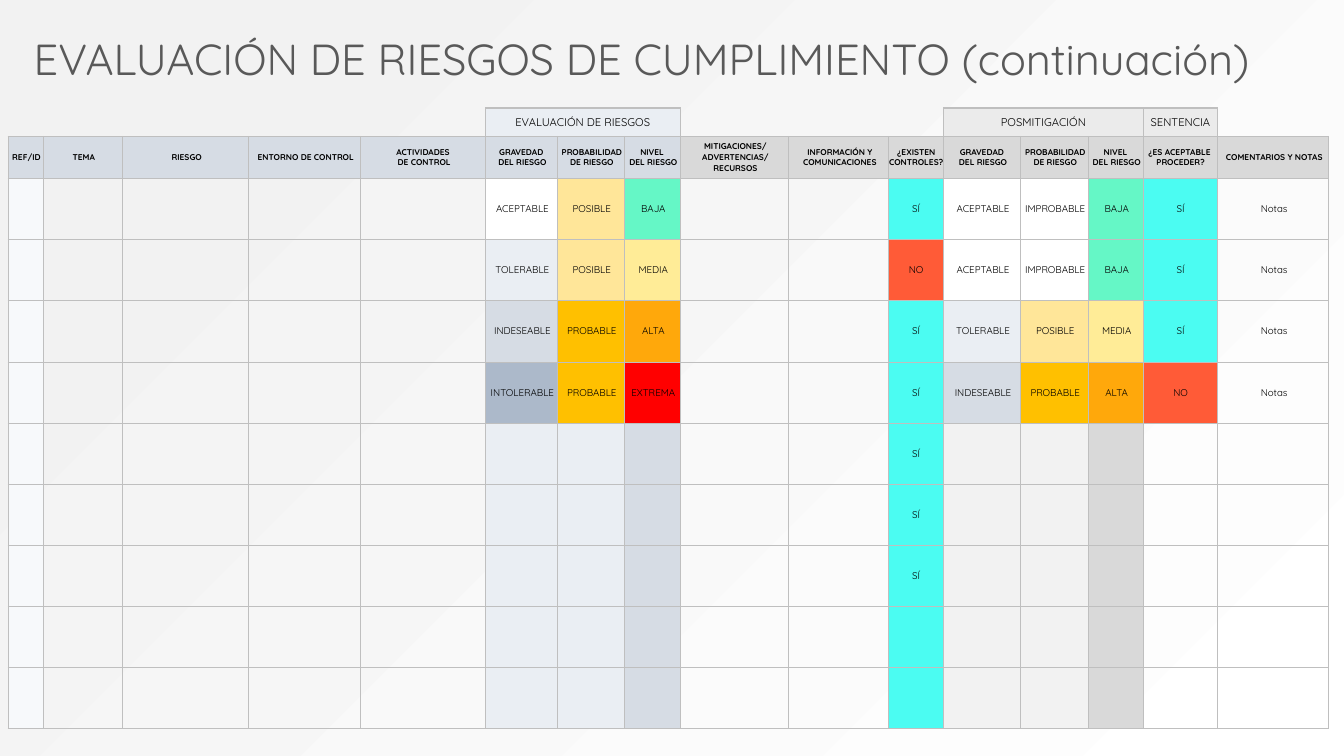
from dataclasses import dataclass

from lxml import etree
from pptx import Presentation
from pptx.dml.color import RGBColor
from pptx.enum.text import MSO_ANCHOR, MSO_AUTO_SIZE, PP_ALIGN
from pptx.oxml.ns import qn
from pptx.slide import Slide
from pptx.table import Table, _Cell
from pptx.util import Cm, Pt

MIDDLE = MSO_ANCHOR.MIDDLE
GROW = MSO_AUTO_SIZE.SHAPE_TO_FIT_TEXT
CENTER = PP_ALIGN.CENTER
PLAIN_TABLE_STYLE = "{2D5ABB26-0587-4C30-8999-92F81FD0307C}"
ALL_SIDES = "LRTB"


@dataclass(frozen=True)
class Theme:
    font: str = "Quicksand"
    title: str = "595959"
    ink: str = "000000"
    white: str = "FFFFFF"
    backdrop: str = "F2F2F2"
    border: str = "BFBFBF"
    blue_pale: str = "F7F9FB"
    blue_light: str = "EAEEF3"
    blue: str = "D6DCE4"
    blue_dark: str = "ACB9CA"
    grey_light: str = "EBEBEB"
    grey: str = "D9D9D9"
    possible: str = "FFE699"
    probable: str = "FFC000"
    low: str = "65F7C6"
    medium: str = "FFEC97"
    high: str = "FFA80B"
    extreme: str = "FF0000"
    yes: str = "4BFCF2"
    no: str = "FF5B37"
    title_size: float = 31
    group_size: float = 8
    header_size: float = 6
    body_size: float = 7


THEME = Theme()


@dataclass(frozen=True)
class Column:
    header: str
    width: float
    header_fill: str
    body_fill: str | None = None
    inset: float = 0.05


@dataclass(frozen=True)
class Group:
    label: str
    first: int
    last: int
    fill: str


COLUMNS = [
    Column("REF/ID", 0.88, THEME.blue, THEME.blue_pale),
    Column("TEMA", 2.01, THEME.blue),
    Column("RIESGO", 3.18, THEME.blue),
    Column("ENTORNO DE CONTROL", 2.82, THEME.blue),
    Column("ACTIVIDADES \nDE CONTROL", 3.15, THEME.blue),
    Column("GRAVEDAD \nDEL RIESGO", 1.8, THEME.blue, THEME.blue_light),
    Column("PROBABILIDAD DE RIESGO", 1.7, THEME.blue, THEME.blue_light),
    Column("NIVEL \nDEL RIESGO", 1.4, THEME.blue, THEME.blue),
    Column("MITIGACIONES/\nADVERTENCIAS/ RECURSOS", 2.74, THEME.grey),
    Column("INFORMACIÓN Y COMUNICACIONES", 2.52, THEME.grey),
    Column("¿EXISTEN CONTROLES?", 1.38, THEME.grey, THEME.yes, 0),
    Column("GRAVEDAD \nDEL RIESGO", 1.94, THEME.grey, THEME.backdrop),
    Column("PROBABILIDAD DE RIESGO", 1.7, THEME.grey, THEME.backdrop),
    Column("NIVEL \nDEL RIESGO", 1.4, THEME.grey, THEME.grey),
    Column("¿ES ACEPTABLE \nPROCEDER?", 1.87, THEME.grey, inset=0),
    Column("COMENTARIOS Y NOTAS", 2.8, THEME.grey),
]
GROUPS = [
    Group("EVALUACIÓN DE RIESGOS", 5, 7, THEME.blue_light),
    Group("POSMITIGACIÓN", 11, 13, THEME.grey_light),
    Group("SENTENCIA", 14, 14, THEME.grey_light),
]
RATING_FILLS = {
    "ACEPTABLE": THEME.white, "TOLERABLE": THEME.blue_light,
    "INDESEABLE": THEME.blue, "INTOLERABLE": THEME.blue_dark,
    "IMPROBABLE": THEME.white, "POSIBLE": THEME.possible, "PROBABLE": THEME.probable,
    "BAJA": THEME.low, "MEDIA": THEME.medium, "ALTA": THEME.high, "EXTREMA": THEME.extreme,
    "SÍ": THEME.yes, "NO": THEME.no,
}
# Columns 5-7 hold the first assessment, 10-15 the controls and the outcome
RATED_COLUMNS = [5, 6, 7, 10, 11, 12, 13, 14, 15]
ASSESSMENTS = [
    ("ACEPTABLE", "POSIBLE", "BAJA", "SÍ", "ACEPTABLE", "IMPROBABLE", "BAJA", "SÍ", "Notas"),
    ("TOLERABLE", "POSIBLE", "MEDIA", "NO", "ACEPTABLE", "IMPROBABLE", "BAJA", "SÍ", "Notas"),
    ("INDESEABLE", "PROBABLE", "ALTA", "SÍ", "TOLERABLE", "POSIBLE", "MEDIA", "SÍ", "Notas"),
    ("INTOLERABLE", "PROBABLE", "EXTREMA", "SÍ", "INDESEABLE", "PROBABLE", "ALTA", "NO", "Notas"),
    *[("", "", "", "SÍ")] * 3,
    *[()] * 2,
]
ROW_HEIGHTS = [0.71, 1.07] + [1.54] * len(ASSESSMENTS)


def style_runs(paragraph, size: float, color: str, bold: bool = False) -> None:
    for run in paragraph.runs:
        run.font.name = THEME.font
        run.font.size = Pt(size)
        run.font.bold = bold
        run.font.color.rgb = RGBColor.from_string(color)


def add_title(slide: Slide) -> None:
    frame = slide.shapes.add_textbox(Cm(0.6), Cm(0.69), Cm(32.69), Cm(1.57)).text_frame
    frame.word_wrap = False
    frame.auto_size = GROW
    frame.text = "EVALUACIÓN DE RIESGOS DE CUMPLIMIENTO (continuación)"
    style_runs(frame.paragraphs[0], THEME.title_size, THEME.title)


def set_borders(cell: _Cell, sides: str = ALL_SIDES, top_width: float = 0.5) -> None:
    properties = cell._tc.get_or_add_tcPr()
    for side in ALL_SIDES:
        width = top_width if side == "T" else 0.5
        line = etree.SubElement(properties, qn(f"a:ln{side}"), w=str(Pt(width)))
        if side in sides:
            fill = etree.SubElement(line, qn("a:solidFill"))
            etree.SubElement(fill, qn("a:srgbClr"), val=THEME.border)
        else:
            etree.SubElement(line, qn("a:noFill"))


def fill_cell(cell: _Cell, text: str, size: float, fill: str | None,
              inset: float = 0, bold: bool = False) -> None:
    cell.margin_left = Cm(inset)
    cell.margin_right = cell.margin_top = cell.margin_bottom = 0
    cell.vertical_anchor = MIDDLE
    paragraph = cell.text_frame.paragraphs[0]
    paragraph.alignment = CENTER
    if text:
        paragraph.text = text
        style_runs(paragraph, size, THEME.ink, bold)
    else:
        # Keeps an empty cell from stretching its row
        paragraph._p.get_or_add_endParaRPr().set("sz", str(int(size * 100)))
    if fill:
        cell.fill.solid()
        cell.fill.fore_color.rgb = RGBColor.from_string(fill)
    else:
        cell.fill.background()


def fill_group_row(table: Table) -> None:
    group_at = {i: group for group in GROUPS for i in range(group.first, group.last + 1)}
    for i in range(len(COLUMNS)):
        cell, group = table.cell(0, i), group_at.get(i)
        if group:
            set_borders(cell, top_width=1)
            fill_cell(cell, group.label if i == group.first else "", THEME.group_size, group.fill)
        else:
            sides = ("L" if i - 1 in group_at else "") + ("R" if i + 1 in group_at else "")
            set_borders(cell, sides + "B")
            fill_cell(cell, "", THEME.group_size, None)
    for group in GROUPS:
        if group.last > group.first:
            table.cell(0, group.first).merge(table.cell(0, group.last))


def add_risk_table(slide: Slide) -> None:
    frame = slide.shapes.add_table(
        len(ROW_HEIGHTS), len(COLUMNS), Cm(0.2), Cm(2.72),
        Cm(sum(column.width for column in COLUMNS)), Cm(sum(ROW_HEIGHTS)))
    table = frame.table
    table.first_row = table.horz_banding = False
    table._tbl.tblPr.find(qn("a:tableStyleId")).text = PLAIN_TABLE_STYLE
    for row, height in zip(table.rows, ROW_HEIGHTS):
        row.height = Cm(height)
    fill_group_row(table)
    for i, column in enumerate(COLUMNS):
        table.columns[i].width = Cm(column.width)
        header = table.cell(1, i)
        set_borders(header)
        fill_cell(header, column.header, THEME.header_size, column.header_fill, column.inset, True)
        for row, assessment in enumerate(ASSESSMENTS, start=2):
            value = dict(zip(RATED_COLUMNS, assessment)).get(i, "")
            cell = table.cell(row, i)
            set_borders(cell)
            fill_cell(cell, value, THEME.body_size,
                      RATING_FILLS.get(value, column.body_fill), column.inset)


def set_background(slide: Slide) -> None:
    fill = slide.background.fill
    fill.gradient()
    fill.gradient_angle = 135
    for stop, color, position in zip(fill.gradient_stops, (THEME.white, THEME.backdrop), (0, 0.87)):
        stop.color.rgb = RGBColor.from_string(color)
        stop.position = position


def main() -> None:
    presentation = Presentation()
    presentation.slide_width, presentation.slide_height = Cm(33.87), Cm(19.05)
    slide = presentation.slides.add_slide(presentation.slide_layouts[6])
    set_background(slide)
    add_risk_table(slide)
    add_title(slide)
    presentation.save("out.pptx")


if __name__ == "__main__":
    main()
